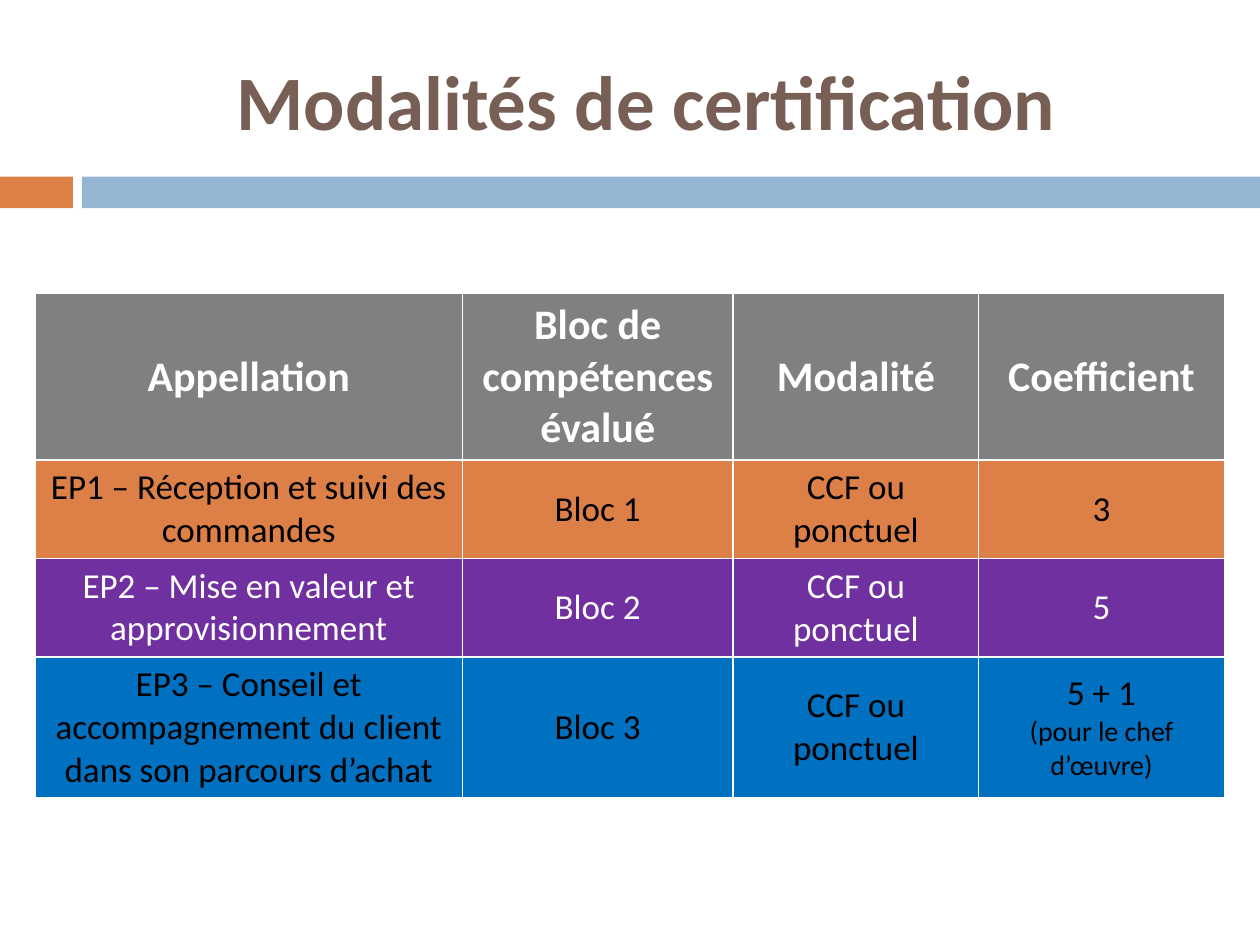
from dataclasses import dataclass

from pptx import Presentation
from pptx.dml.color import RGBColor
from pptx.enum.shapes import MSO_SHAPE
from pptx.enum.text import MSO_ANCHOR, PP_ALIGN
from pptx.slide import Slide
from pptx.table import _Cell
from pptx.util import Cm, Pt

RECTANGLE = MSO_SHAPE.RECTANGLE
MIDDLE, TOP = MSO_ANCHOR.MIDDLE, MSO_ANCHOR.TOP
CENTER = PP_ALIGN.CENTER
TITLE_ONLY = 5


@dataclass(frozen=True)
class Theme:
    font: str = "Calibri"
    brown: str = "775F55"
    orange: str = "DD8047"
    light_blue: str = "94B6D2"
    gray: str = "808080"
    purple: str = "7030A0"
    blue: str = "0070C0"
    white: str = "FFFFFF"
    black: str = "000000"
    title_size: int = 44
    header_size: int = 24
    body_size: int = 20
    note_size: int = 16


THEME = Theme()


@dataclass(frozen=True)
class Band:
    left: float
    width: float
    color: str


@dataclass(frozen=True)
class TableRow:
    texts: tuple[str, ...]
    height: float
    fill: str
    color: str
    size: int = THEME.body_size
    bold: bool = False
    first_anchor: MSO_ANCHOR = TOP


BAND_TOP, BAND_HEIGHT = 3.56, 0.64
BANDS = (
    Band(0, 1.47, THEME.orange),
    Band(1.65, 23.75, THEME.light_blue),
)
TABLE_LEFT, TABLE_TOP = 0.71, 5.92
COLUMN_WIDTHS = (8.61, 5.46, 4.95, 4.95)
EXAM_MODE = "CCF ou ponctuel"
ROWS = (
    TableRow(("Appellation", "Bloc de compétences évalué", "Modalité", "Coefficient"),
             3.3, THEME.gray, THEME.white, THEME.header_size, True, MIDDLE),
    TableRow(("EP1 – Réception et suivi des commandes", "Bloc 1", EXAM_MODE, "3"),
             1.95, THEME.orange, THEME.black),
    TableRow(("EP2 – Mise en valeur et approvisionnement", "Bloc 2", EXAM_MODE, "5"),
             1.95, THEME.purple, THEME.white),
    TableRow(("EP3 – Conseil et accompagnement du client dans son parcours d’achat",
              "Bloc 3", EXAM_MODE, "5 + 1\n(pour le chef d’œuvre)"),
             2.8, THEME.blue, THEME.black),
)


def style_paragraph(paragraph, size: int, color: str, bold: bool) -> None:
    paragraph.alignment = CENTER
    font = paragraph.font
    font.name, font.size, font.bold = THEME.font, Pt(size), bold
    font.color.rgb = RGBColor.from_string(color)


def add_title(slide: Slide, text: str) -> None:
    title = slide.shapes.title
    title.left, title.top = Cm(1.7), Cm(0.64)
    title.width, title.height = Cm(22.66), Cm(2.74)
    title.text_frame.text = text
    title.text_frame.vertical_anchor = MIDDLE
    style_paragraph(title.text_frame.paragraphs[0], THEME.title_size, THEME.brown, True)


def add_band(slide: Slide, band: Band) -> None:
    bar = slide.shapes.add_shape(
        RECTANGLE, Cm(band.left), Cm(BAND_TOP), Cm(band.width), Cm(BAND_HEIGHT))
    bar.shadow.inherit = False
    bar.fill.solid()
    bar.fill.fore_color.rgb = RGBColor.from_string(band.color)
    bar.line.fill.background()


def fill_cell(cell: _Cell, text: str, row: TableRow, anchor: MSO_ANCHOR) -> None:
    """Write the text, one paragraph per line; lines after the first are smaller notes."""
    cell.fill.solid()
    cell.fill.fore_color.rgb = RGBColor.from_string(row.fill)
    cell.vertical_anchor = anchor
    cell.text_frame.text = text
    for index, paragraph in enumerate(cell.text_frame.paragraphs):
        size = THEME.note_size if index else row.size
        style_paragraph(paragraph, size, row.color, row.bold)


def add_certification_table(slide: Slide) -> None:
    table = slide.shapes.add_table(
        len(ROWS), len(COLUMN_WIDTHS), Cm(TABLE_LEFT), Cm(TABLE_TOP),
        Cm(sum(COLUMN_WIDTHS)), Cm(sum(row.height for row in ROWS))).table
    for column, width in zip(table.columns, COLUMN_WIDTHS):
        column.width = Cm(width)
    for table_row, row in zip(table.rows, ROWS):
        table_row.height = Cm(row.height)
        for index, (cell, text) in enumerate(zip(table_row.cells, row.texts)):
            fill_cell(cell, text, row, MIDDLE if index else row.first_anchor)


def main() -> None:
    presentation = Presentation()
    presentation.slide_width, presentation.slide_height = Cm(25.4), Cm(19.05)
    slide = presentation.slides.add_slide(presentation.slide_layouts[TITLE_ONLY])
    for band in BANDS:
        add_band(slide, band)
    add_title(slide, "Modalités de certification")
    add_certification_table(slide)
    presentation.save("out.pptx")


if __name__ == "__main__":
    main()
